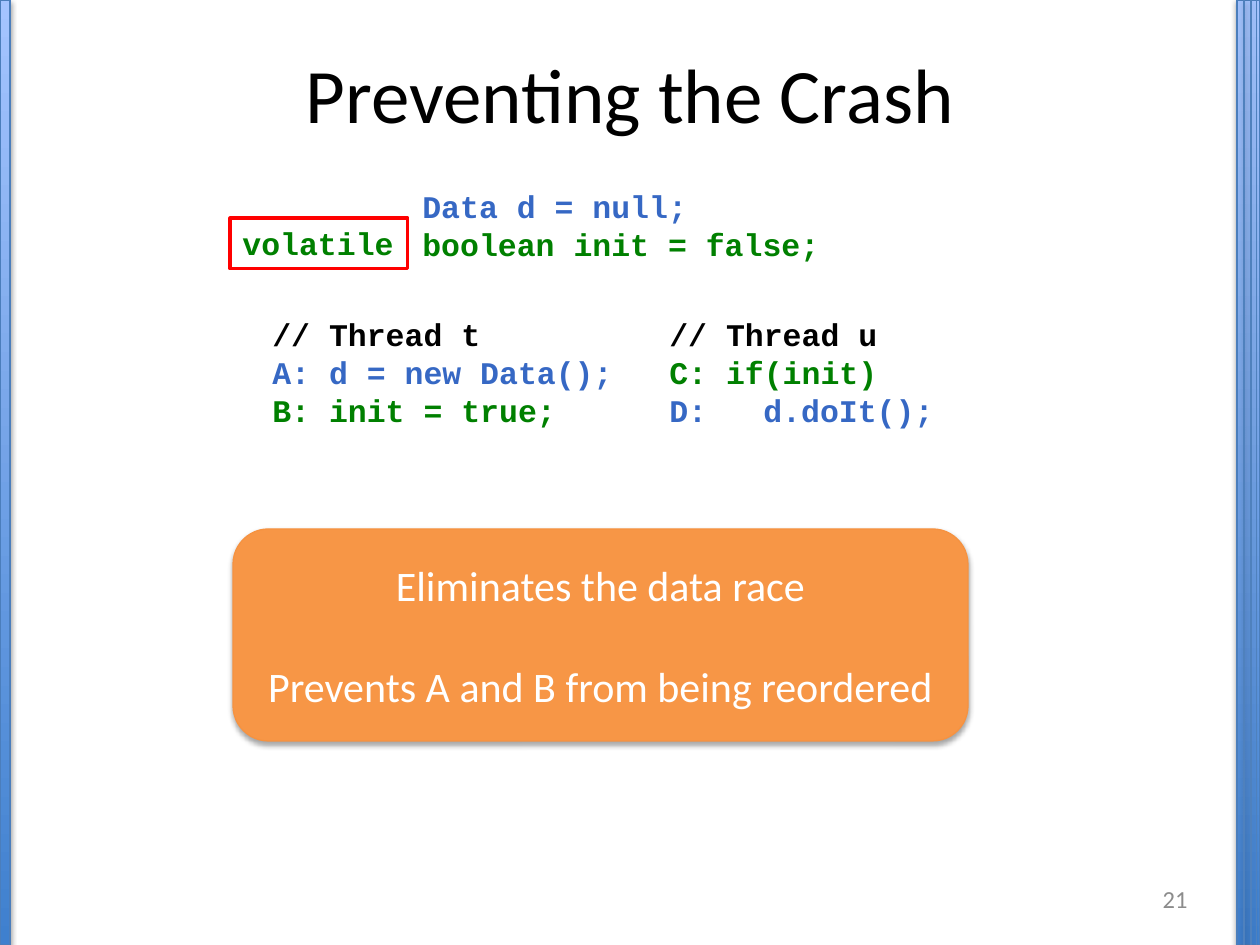
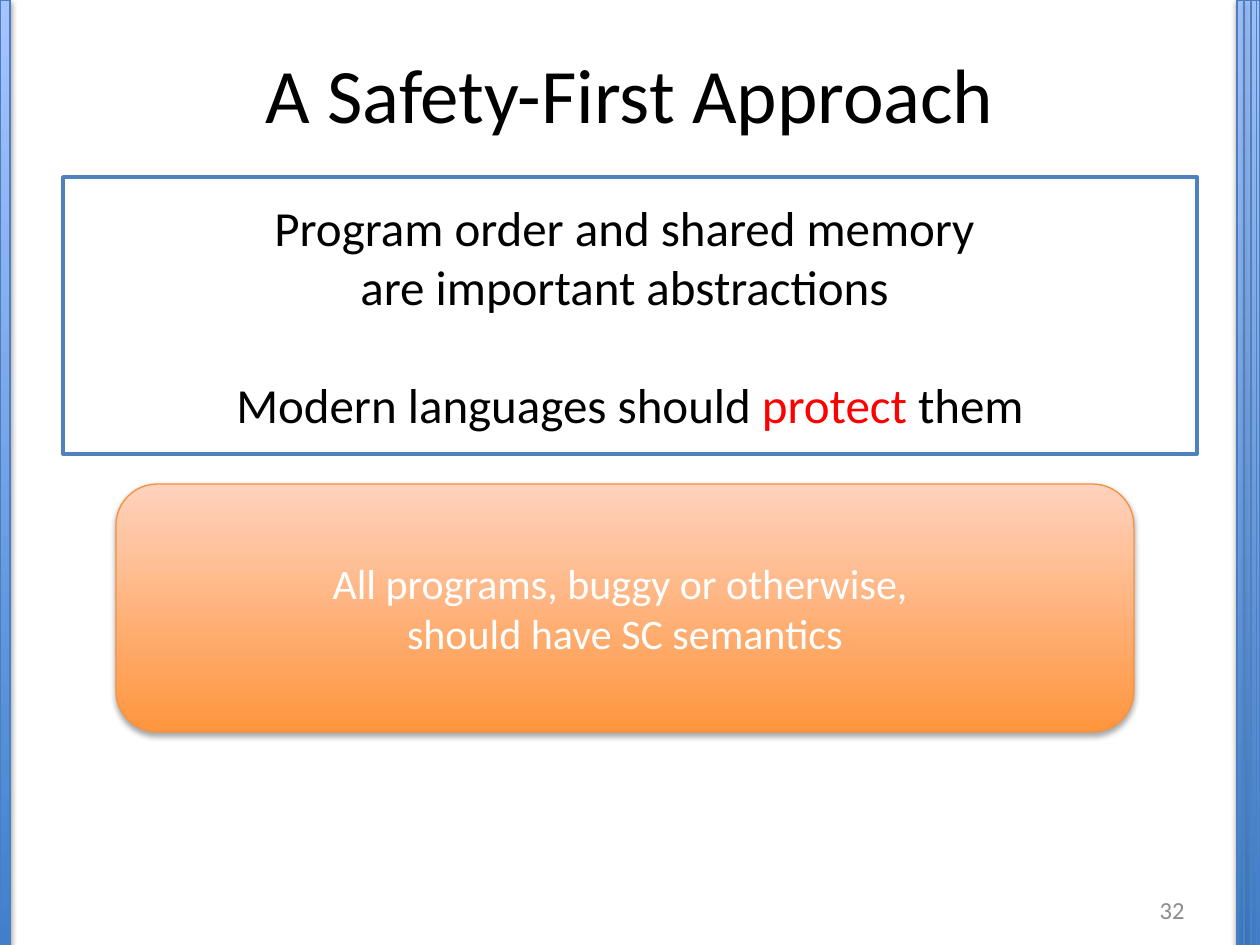
from lxml.etree import SubElement
from pptx import Presentation
from pptx.dml.color import RGBColor as Rgb
from pptx.enum.shapes import MSO_CONNECTOR as Connector, MSO_SHAPE as Shape
from pptx.enum.text import MSO_ANCHOR as Anchor, PP_ALIGN as Align
from pptx.oxml.ns import qn
from pptx.util import Emu, Pt

SCALE = 914400 / 126
WIDTH, HEIGHT = 1260, 945
COLORS = {
    "black": "000000", "white": "FFFFFF", "red": "FF0000", "gray": "8C8C8C",
    "data": "3668C4", "flag": "008000", "rule": "4F81BD",
    "band_edge": "4B7EBC", "band_low": "3F80CE", "band_high": "A4C4FF",
    "callout": "F79646", "callout_edge": "F69240",
    "callout_low": "FF953E", "callout_high": "FFD2BD",
}
FONTS = {
    "title": {"name": "Calibri", "size": Pt(44)},
    "statement": {"name": "Calibri", "size": Pt(28)},
    "callout": {"name": "Calibri", "size": Pt(24)},
    "number": {"name": "Calibri", "size": Pt(14)},
    "code": {"name": "Courier New", "size": Pt(18), "bold": True},
}
BAND_SHADOW = {"alpha": 35, "dist": 23000}
RULE_SHADOW = {"alpha": 38, "dist": 20000}


def px(length):
    return Emu(round(length * SCALE))


def rgb(color):
    return Rgb.from_string(COLORS[color])


class Deck:
    def __init__(self):
        self.prs = Presentation()
        self.prs.slide_width, self.prs.slide_height = px(WIDTH), px(HEIGHT)
        self.slide = None

    def start(self, title, number, number_box):
        self.slide = self.prs.slides.add_slide(self.prs.slide_layouts[6])
        self.band(1237, 23)
        for x, weight in ((1244, 1.5), (1251, 1), (1256, 0.5)):
            self.rule(x, weight)
        self.band(0, 10)
        self.text((63, 38, 1134, 110), "title", [[(title, "black")]], Align.CENTER, Anchor.MIDDLE)
        self.text(number_box, "number", [[(number, "gray")]], Align.RIGHT, Anchor.MIDDLE)

    def shadow(self, shape, alpha, dist):
        properties = shape.element.spPr
        effects = properties.find(qn("a:effectLst"))
        if effects is None:
            effects = SubElement(properties, qn("a:effectLst"))
        outer = SubElement(effects, qn("a:outerShdw"), blurRad="40000", dist=str(dist),
                           dir="5400000", rotWithShape="0")
        black = SubElement(outer, qn("a:srgbClr"), val=COLORS["black"])
        SubElement(black, qn("a:alpha"), val=str(alpha * 1000))

    def shape(self, kind, box, edge, weight, fill=None, shadow=None):
        shape = self.slide.shapes.add_shape(kind, *map(px, box))
        shape.shadow.inherit = False
        shape.line.color.rgb = rgb(edge)
        shape.line.width = Pt(weight)
        if fill is None:
            shape.fill.background()
        elif isinstance(fill, tuple):
            shape.fill.gradient()
            shape.fill.gradient_angle = 90
            for stop, color in zip(shape.fill.gradient_stops, fill):
                stop.color.rgb = rgb(color)
        else:
            shape.fill.solid()
            shape.fill.fore_color.rgb = rgb(fill)
        if shadow:
            self.shadow(shape, **shadow)
        return shape

    def band(self, x, width):
        self.shape(Shape.RECTANGLE, (x, 0, width, HEIGHT), "band_edge", 0.75,
                   ("band_low", "band_high"), BAND_SHADOW)

    def rule(self, x, weight):
        rule = self.slide.shapes.add_connector(Connector.STRAIGHT, px(x), 0, px(x), px(HEIGHT))
        rule.line.color.rgb = rgb("rule")
        rule.line.width = Pt(weight)
        self.shadow(rule, **RULE_SHADOW)

    def callout(self, box, fill, lines, gap=0):
        callout = self.shape(Shape.ROUNDED_RECTANGLE, box, "callout_edge", 0.75, fill, BAND_SHADOW)
        self.fill_text(callout, "callout", [[(line, "white")] for line in lines],
                       Align.CENTER, Anchor.MIDDLE, gap)

    def text(self, box, font, lines, align=Align.LEFT, anchor=Anchor.TOP, tabs=()):
        self.fill_text(self.slide.shapes.add_textbox(*map(px, box)), font, lines,
                       align, anchor, tabs=tabs)

    def fill_text(self, shape, font, lines, align, anchor, gap=0, tabs=()):
        frame = shape.text_frame
        for name, value in {"word_wrap": True, "vertical_anchor": anchor}.items():
            setattr(frame, name, value)
        for index, line in enumerate(lines):
            paragraph = frame.paragraphs[0] if index == 0 else frame.add_paragraph()
            paragraph.alignment = align
            if gap and index == len(lines) - 1:
                paragraph.space_before = Pt(gap)
            if tabs:
                stops = SubElement(paragraph._p.get_or_add_pPr(), qn("a:tabLst"))
                for tab in tabs:
                    SubElement(stops, qn("a:tab"), pos=str(px(tab)), algn="l")
            for words, color in line:
                run = paragraph.add_run()
                run.text = words
                for name, value in FONTS[font].items():
                    setattr(run.font, name, value)
                run.font.color.rgb = rgb(color)


def crash_slide(deck):
    deck.start("Preventing the Crash", "21", (1115, 863, 85, 72))
    deck.text((260, 309, 693, 165), "code", [
        [("// Thread t\t// Thread u", "black")],
        [("A: d = new Data();\t", "data"), ("C: if(init)", "flag")],
        [("B: init = true;\t", "flag"), ("D:\td.doIt();", "data")],
    ], tabs=(397, 491))
    deck.text((410, 181, 426, 127), "code", [
        [("Data d = null;", "data")],
        [("boolean init = false;", "flag")],
    ])
    keyword = deck.shape(Shape.RECTANGLE, (230, 218, 178, 51), "red", 1.75)
    deck.fill_text(keyword, "code", [[("volatile", "flag")]], Align.LEFT, Anchor.TOP)
    deck.callout((233, 529, 735, 212), "callout",
                 ["Eliminates the data race", "Prevents A and B from being reordered"], gap=29)


def safety_slide(deck):
    deck.start("A Safety-First Approach", "32", (903, 885, 294, 50))
    principle = deck.shape(Shape.RECTANGLE, (63, 177, 1134, 277), "rule", 2, "white")
    deck.fill_text(principle, "statement", [
        [("Program order and shared memory ", "black")],
        [("are important abstractions ", "black")],
        [("Modern languages should ", "black"), ("protect ", "red"), ("them", "black")],
    ], Align.CENTER, Anchor.MIDDLE, gap=34)
    deck.callout((116, 484, 1018, 248), ("callout_low", "callout_high"),
                 ["All programs, buggy or otherwise, ", "should have SC semantics"])


def main():
    deck = Deck()
    crash_slide(deck)
    safety_slide(deck)
    deck.prs.save("out.pptx")


if __name__ == "__main__":
    main()
